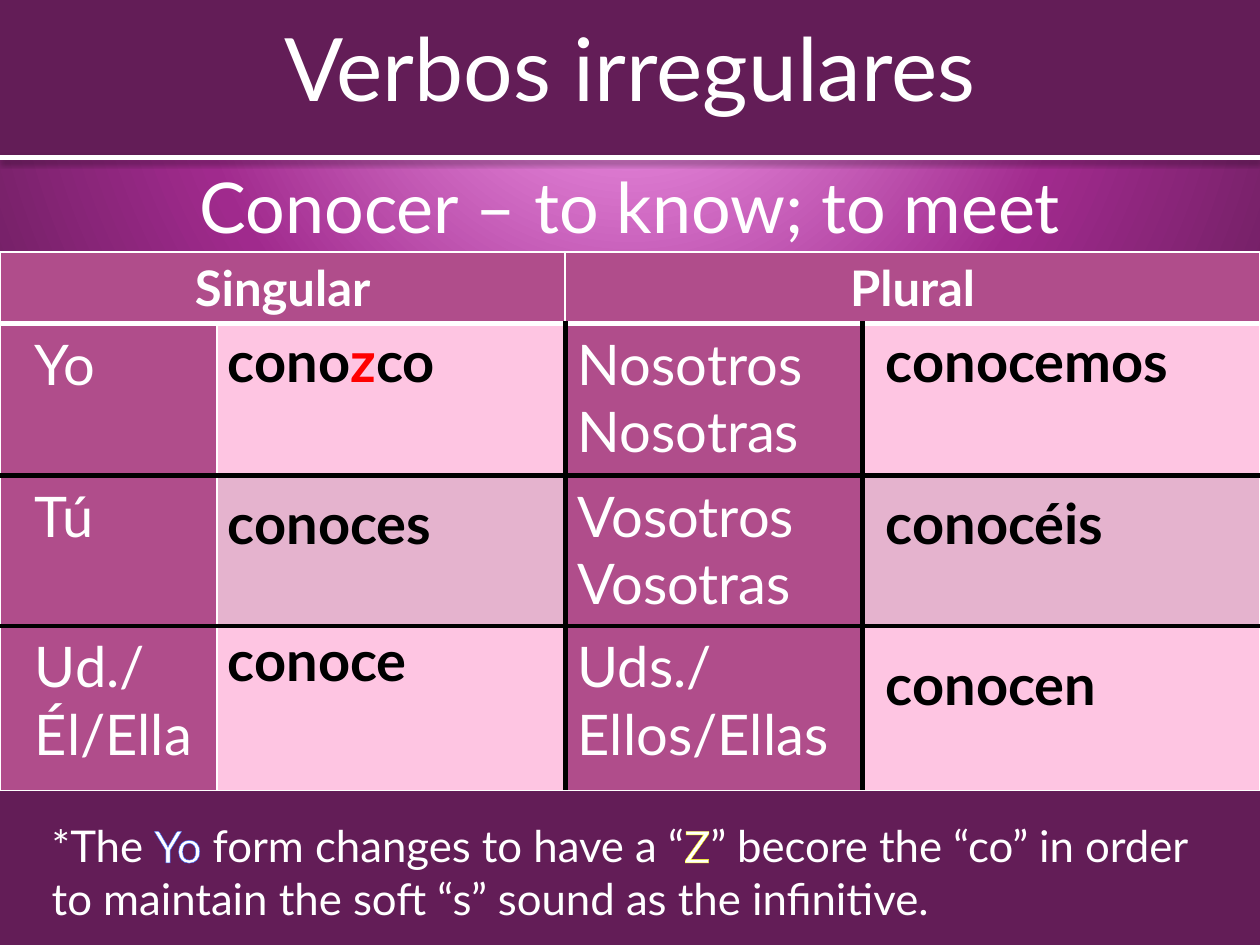
from dataclasses import dataclass
from itertools import product
from pptx import Presentation
from pptx.util import Pt
from pptx.dml.color import RGBColor as RGB
from pptx.enum.shapes import MSO_SHAPE as Shape, MSO_CONNECTOR as Conn
from pptx.enum.text import PP_ALIGN as Align, MSO_ANCHOR as Anchor, MSO_AUTO_SIZE as Auto
from pptx.oxml import parse_xml
from pptx.oxml.ns import nsdecls

NS = nsdecls("a", "p")
PLAIN = "{2D5ABB26-0587-4C30-8999-92F81FD0307C}"  # no style, no grid


@dataclass(frozen=True)
class Theme:
    font: str = "Lato"
    white: str = "FFFFFF"
    black: str = "000000"
    red: str = "FF0000"
    blue: str = "3366FF"
    yellow: str = "FFFF00"
    plum: str = "631D57"
    rose: str = "B04D8B"
    light: str = "FEC5E2"
    dusk: str = "E5B3CE"
    glow: tuple = ((0, "FEA8F7"), (57, "A02A8D"), (100, "631D57"))
    title: int = 50
    sub: int = 40
    body: int = 32
    head: int = 28
    note: int = 25


class Deck:
    def __init__(self, theme, wide, high):
        self.theme = theme
        self.prs = Presentation()
        self.prs.slide_width, self.prs.slide_height = Pt(wide), Pt(high)
        self.slide = self.prs.slides.add_slide(self.prs.slide_layouts[6])
        self.shapes = self.slide.shapes

    def back(self, stops):
        marks = "".join(f'<a:gs pos="{pos * 1000}"><a:srgbClr val="{tint}"/></a:gs>'
                        for pos, tint in stops)
        self.slide.element.cSld.insert(0, parse_xml(
            f'<p:bg {NS}><p:bgPr><a:gradFill><a:gsLst>{marks}</a:gsLst>'
            '<a:path path="circle"><a:fillToRect l="50000" t="-80000" r="50000" '
            'b="180000"/></a:path></a:gradFill><a:effectLst/></p:bgPr></p:bg>'))

    def rect(self, box, fill):
        item = self.shapes.add_shape(Shape.RECTANGLE, *map(Pt, box))
        item.shadow.inherit = False
        item.fill.solid()
        item.fill.fore_color.rgb = RGB.from_string(fill)
        item.line.fill.background()

    def line(self, start, end, tint, width):
        item = self.shapes.add_connector(Conn.STRAIGHT, *map(Pt, start + end))
        item.line.color.rgb = RGB.from_string(tint)
        item.line.width = Pt(width)
        item._element.spPr.append(parse_xml(
            f'<a:effectLst {NS}><a:outerShdw blurRad="{Pt(3.1)}" dist="{Pt(1.6)}" '
            f'dir="5400000"><a:srgbClr val="{self.theme.black}"><a:alpha val="38000"/>'
            '</a:srgbClr></a:outerShdw></a:effectLst>'))

    def words(self, frame, paras, size, tint, bold=False, align=Align.LEFT):
        """Each paragraph is a list of (text, colour, outline) runs or a string."""
        for i, runs in enumerate(paras):
            para = frame.add_paragraph() if i else frame.paragraphs[0]
            para.alignment = align
            font = para.font
            font.name, font.size, font.bold = self.theme.font, Pt(size), bold
            font.color.rgb = RGB.from_string(tint)
            for text, ink, edge in [(runs, None, None)] if isinstance(runs, str) else runs:
                run = para.add_run()
                run.text = text
                if edge:
                    run.font._element.insert(0, parse_xml(
                        f'<a:ln {NS} w="{Pt(0.75)}"><a:solidFill><a:srgbClr val="{edge}"/>'
                        '</a:solidFill></a:ln>'))
                if ink:
                    run.font.color.rgb = RGB.from_string(ink)

    def text(self, box, paras, size, align=Align.LEFT, anchor=Anchor.TOP, grow=False):
        frame = self.shapes.add_textbox(*map(Pt, box)).text_frame
        frame.word_wrap = True
        frame.vertical_anchor = anchor
        frame.auto_size = Auto.SHAPE_TO_FIT_TEXT if grow else Auto.NONE
        self.words(frame, paras, size, self.theme.white, align=align)

    def table(self, left, top, cols, rows):
        item = self.shapes.add_table(len(rows), len(cols), Pt(left), Pt(top),
                                     Pt(sum(cols)), Pt(sum(rows)))
        grid = item.table
        grid.first_row = grid.horz_banding = False
        grid._tbl.tblPr[0].text = PLAIN
        for part, size in zip(grid.columns, cols):
            part.width = Pt(size)
        for part, size in zip(grid.rows, rows):
            part.height = Pt(size)
        return grid

    def cell(self, cell, fill, edges):
        """Edges are (colour, width) for left, right, top and bottom."""
        prop = cell._tc.get_or_add_tcPr()
        for side, (tint, width) in zip("LRTB", edges):
            prop.append(parse_xml(
                f'<a:ln{side} {NS} w="{Pt(width)}"><a:solidFill><a:srgbClr val="{tint}"/>'
                f'</a:solidFill></a:ln{side}>'))
        cell.fill.solid()
        cell.fill.fore_color.rgb = RGB.from_string(fill)


def main():
    look = Theme()
    deck = Deck(look, 720, 540)

    # Background and headings
    deck.back(look.glow)
    deck.rect((0, 0, 720, 90), look.plum)
    deck.text((0, 90, 720, 375), ["Conocer – to know; to meet"], look.sub, Align.CENTER)
    deck.line((0, 90), (720, 90), look.white, 3)
    deck.text((0, 0, 720, 76), ["Verbos irregulares"], look.title,
              Align.CENTER, Anchor.MIDDLE)

    # Pronoun grid: fills and borders
    cols, rows = (124, 199, 170, 227), (40, 87, 86, 94)
    grid = deck.table(0, 144, cols, rows)
    thin, thick, rule = (look.white, 1), (look.white, 3), (look.black, 3)
    across = (thin, thick, rule, rule, thin)
    down = (thin, thin, rule, rule, thin)
    for r, c in product(range(len(rows)), range(len(cols))):
        band = look.light if r % 2 else look.dusk
        fill = look.rose if r == 0 or c % 2 == 0 else band
        sides = down[c:c + 2] if r else (thin, thin)
        deck.cell(grid.cell(r, c), fill, sides + across[r:r + 2])

    # Pronoun grid: words
    for c, head in ((0, "Singular"), (2, "Plural")):
        grid.cell(0, c).merge(grid.cell(0, c + 1))
        deck.words(grid.cell(0, c).text_frame, [head], look.head, look.white,
                   True, Align.CENTER)
    nouns = ((["Yo"], ["Nosotros", "Nosotras"]),
             (["Tú"], ["Vosotros", "Vosotras"]),
             (["Ud./", "Él/Ella"], ["Uds./Ellos/Ellas"]))
    for r, pair in enumerate(nouns, 1):
        for c, paras in zip((0, 2), pair):
            deck.words(grid.cell(r, c).text_frame, paras, look.body, look.white)
        grid.cell(r, 0).margin_left, grid.cell(r, 0).margin_right = Pt(20), Pt(4)

    # Verb forms, each a movable one-cell table
    yo = [("cono", None, None), ("z", look.red, None), ("co", None, None)]
    forms = ((123, 183.5, 177, 45.5, yo),
             (123, 276, 168, 45.5, "conoces"),
             (123, 354, 177, 48, "conoce"),
             (499, 183.5, 203, 49, "conocemos"),
             (499, 276, 181, 45.5, "conocéis"),
             (499, 368, 173, 45.5, "conocen"))
    for left, top, wide, high, form in forms:
        spot = deck.table(left, top, [wide], [high]).cell(0, 0)
        deck.words(spot.text_frame, [form], look.body, look.black, True)

    # Spelling note
    note = [("*The ", None, None), ("Yo", None, look.blue),
            (" form changes to have a “", None, None), ("Z", None, look.yellow),
            ("” becore the “co” in order to maintain the soft “s” sound "
             "as the infinitive.", None, None)]
    deck.text((22.5, 464.5, 679, 67.5), [note], look.note, grow=True)

    deck.prs.save("out.pptx")


if __name__ == "__main__":
    main()
